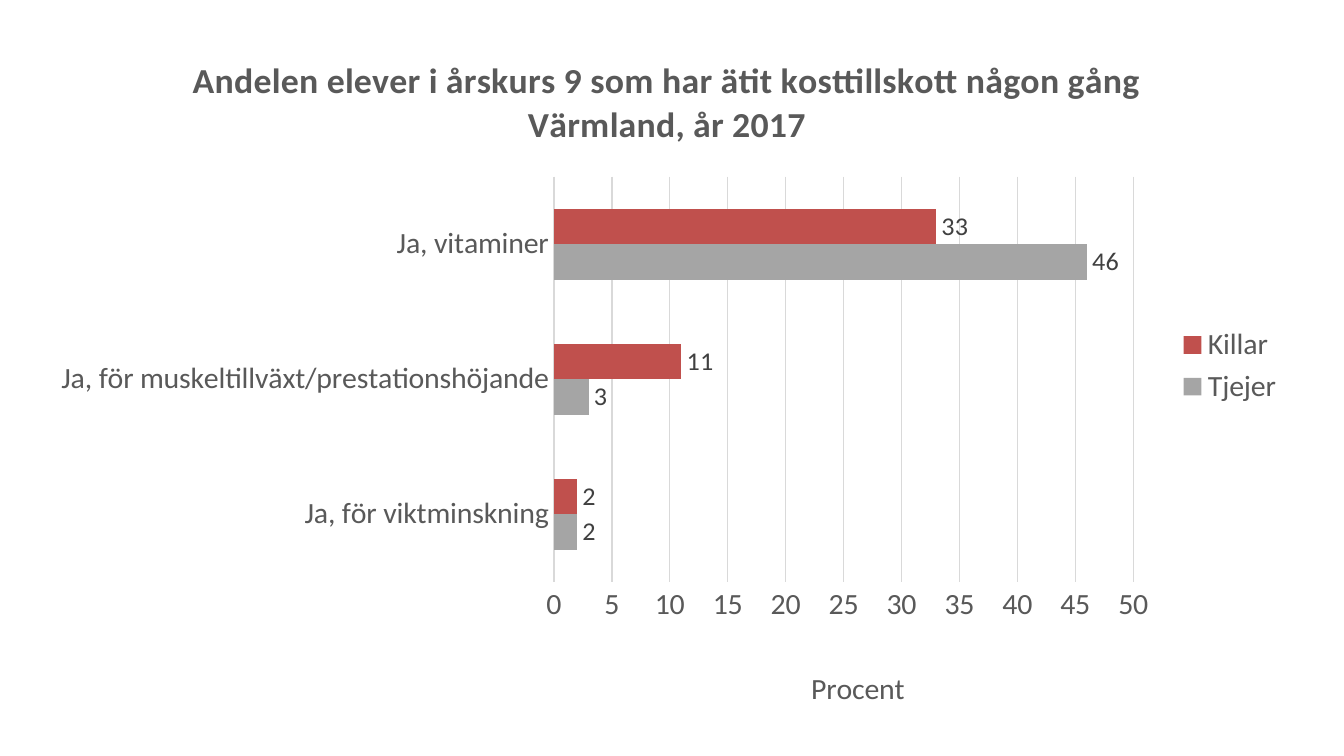
import pptx
import pptx.chart.data
import pptx.dml.color
import pptx.enum.chart
import pptx.oxml
import pptx.oxml.ns
import pptx.util

Inches = pptx.util.Inches
Pt = pptx.util.Pt
RGBColor = pptx.dml.color.RGBColor

TITLE = "Andelen elever i årskurs 9 som har ätit kosttillskott någon gång Värmland, år 2017"
AXIS_TITLE = "Procent"
CATEGORIES = ["Ja, för viktminskning", "Ja, för muskeltillväxt/prestationshöjande", "Ja, vitaminer"]
GREY = RGBColor(0xA5, 0xA5, 0xA5)
RED = RGBColor(0xC0, 0x50, 0x4D)
TEXT = RGBColor(0x59, 0x59, 0x59)
LABEL = RGBColor(0x40, 0x40, 0x40)
LINE = RGBColor(0xD9, 0xD9, 0xD9)
SERIES = [("Tjejer", (2, 3, 46), GREY), ("Killar", (2, 11, 33), RED)]


def style_font(font, size, color, bold=False):
    font.name = "Calibri"
    font.size = Pt(size)
    font.color.rgb = color
    font.bold = bold


def style_line(line):
    line.color.rgb = LINE
    line.width = Pt(0.75)


def set_title(title, text, size, bold):
    title.text_frame.text = text
    style_font(title.text_frame.paragraphs[0].runs[0].font, size, TEXT, bold)


def set_layout(element, settings):
    namespace = pptx.oxml.ns.nsdecls("c")
    entries = "".join(f'<c:{name} val="{value}"/>' for name, value in settings.items())
    layout = pptx.oxml.parse_xml(
        f"<c:layout {namespace}><c:manualLayout>{entries}</c:manualLayout></c:layout>"
    )
    for present in element.findall(pptx.oxml.ns.qn("c:layout")):
        element.remove(present)
    text = element.find(pptx.oxml.ns.qn("c:tx"))
    if text is None:
        element.insert(0, layout)
    else:
        text.addnext(layout)


presentation = pptx.Presentation()
presentation.slide_width = Inches(10)
presentation.slide_height = Inches(10) * 9 // 16
slide = presentation.slides.add_slide(presentation.slide_layouts[6])

data = pptx.chart.data.CategoryChartData(number_format="0")
data.categories = CATEGORIES
for name, values, color in SERIES:
    data.add_series(name, values)
chart = slide.shapes.add_chart(
    pptx.enum.chart.XL_CHART_TYPE.BAR_CLUSTERED,
    Inches(0.28), Inches(0.21), Inches(9.37), Inches(5.12), data,
).chart
style_font(chart.font, 16, TEXT)
set_title(chart.chart_title, TITLE, 19.2, True)
chart.chart_title.include_in_layout = False

plot = chart.plots[0]
plot.gap_width = 182
plot.overlap = 0
plot.vary_by_categories = False
set_layout(
    chart._chartSpace.chart.plotArea,
    {"layoutTarget": "inner", "xMode": "edge", "yMode": "edge",
     "x": 0.41, "y": 0.22, "w": 0.46, "h": 0.6},
)
for series, (name, values, color) in zip(plot.series, SERIES):
    series.format.fill.solid()
    series.format.fill.fore_color.rgb = color
    labels = series.data_labels
    labels.show_value = True
    labels.number_format = "0"
    labels.number_format_is_linked = False
    labels.position = pptx.enum.chart.XL_LABEL_POSITION.OUTSIDE_END
    style_font(labels.font, 14, LABEL)

category_axis = chart.category_axis
value_axis = chart.value_axis
for axis in (category_axis, value_axis):
    axis.major_tick_mark = pptx.enum.chart.XL_TICK_MARK.NONE
    axis.minor_tick_mark = pptx.enum.chart.XL_TICK_MARK.NONE
    style_font(axis.tick_labels.font, 16, TEXT)
style_line(category_axis.format.line)
value_axis.format.line.fill.background()
value_axis.minimum_scale = 0
value_axis.maximum_scale = 50
value_axis.major_unit = 5
value_axis.tick_labels.number_format = "0"
value_axis.tick_labels.number_format_is_linked = False
value_axis.has_major_gridlines = True
style_line(value_axis.major_gridlines.format.line)
set_title(value_axis.axis_title, AXIS_TITLE, 16, False)
set_layout(
    value_axis.axis_title._element,
    {"xMode": "edge", "yMode": "edge", "x": 0.61, "y": 0.94},
)

chart.has_legend = True
chart.legend.position = pptx.enum.chart.XL_LEGEND_POSITION.RIGHT
chart.legend.include_in_layout = False
style_font(chart.legend.font, 16, TEXT)

presentation.save("out.pptx")
